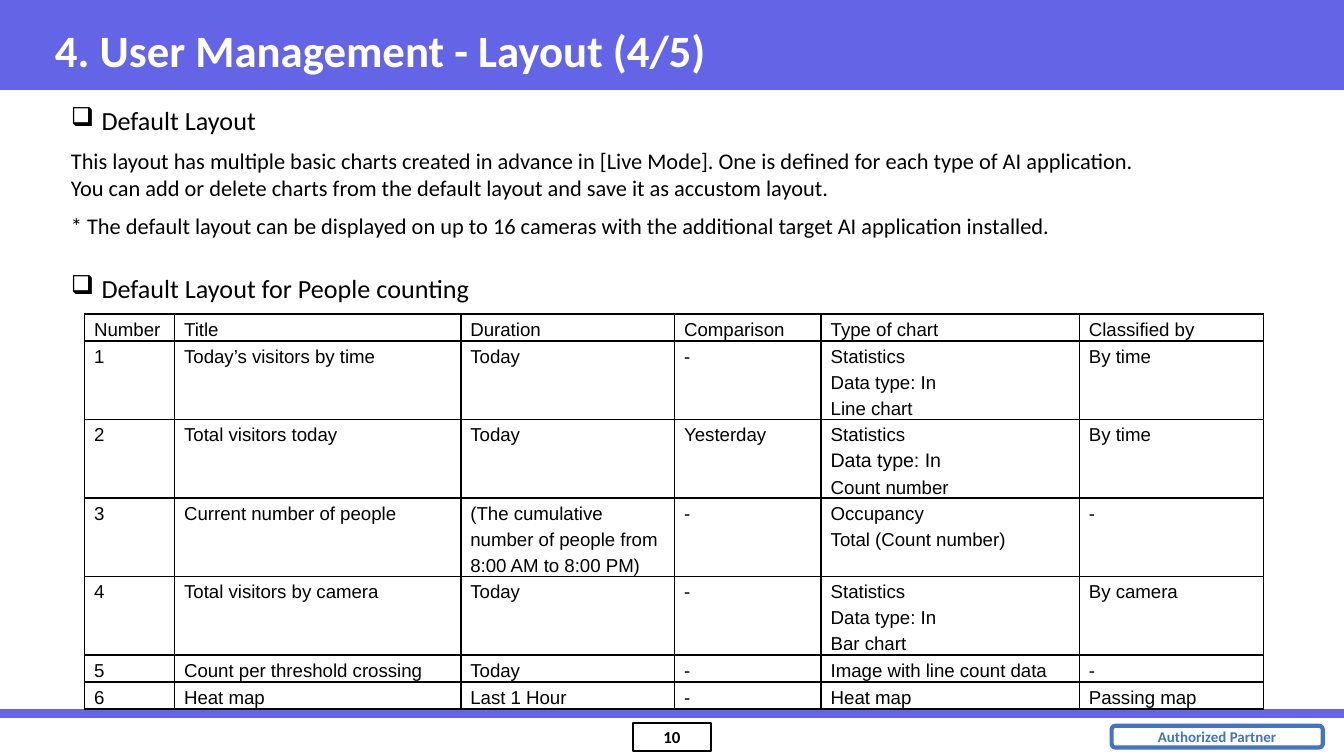
from lxml import etree
from pptx import Presentation
from pptx.dml.color import RGBColor
from pptx.enum.shapes import MSO_CONNECTOR, MSO_SHAPE
from pptx.enum.text import MSO_ANCHOR, PP_ALIGN
from pptx.oxml.ns import qn
from pptx.util import Cm, Pt

RECT, ROUND = MSO_SHAPE.RECTANGLE, MSO_SHAPE.ROUNDED_RECTANGLE
STRAIGHT = MSO_CONNECTOR.STRAIGHT
MIDDLE, TOP = MSO_ANCHOR.MIDDLE, MSO_ANCHOR.TOP
CENTER, LEFT = PP_ALIGN.CENTER, PP_ALIGN.LEFT
COLORS = {"bar": "6464E6", "badge": "4472C4", "ink": "000000", "white": "FFFFFF"}
WIDTH, HEIGHT = 25.4, 14.29

COLS = [1.7, 5.41, 4.04, 2.77, 4.88, 3.48]
LINE, TALL = 0.51, 1.48
HEIGHTS = [LINE] + [TALL] * 4 + [LINE] * 2
ROWS = [
    ["Number", "Title", "Duration", "Comparison", "Type of chart", "Classified by"],
    ["1", "Today’s visitors by time", "Today", "-",
     "Statistics\nData type: In\nLine chart", "By time"],
    ["2", "Total visitors today", "Today", "Yesterday",
     "Statistics\nData type: In\nCount number", "By time"],
    ["3", "Current number of people",
     "(The cumulative number of people from 8:00 AM to 8:00 PM)", "-",
     "Occupancy\nTotal (Count number)", "-"],
    ["4", "Total visitors by camera", "Today", "-",
     "Statistics\nData type: In\nBar chart", "By camera"],
    ["5", "Count per threshold crossing", "Today", "-",
     "Image with line count data", "-"],
    ["6", "Heat map", "Last 1 Hour", "-", "Heat map", "Passing map"],
]
NOTES = [
    ("This layout has multiple basic charts created in advance in [Live Mode]. "
     "One is defined for each type of AI application.", 6),
    ("You can add or delete charts from the default layout "
     "and save it as accustom layout.", 0),
    ("* The default layout can be displayed on up to 16 cameras "
     "with the additional target AI application installed.", 6),
]


def rgb(name):
    return RGBColor.from_string(COLORS[name])


class Page:
    """Holds the text style and the slide being drawn; lengths are in cm."""

    font = "Calibri"
    grid_font = "Arial"

    def __init__(self, slide):
        self.slide = slide
        self.shapes = slide.shapes

    def run(self, para, text, size, color="ink", bold=False, font=None):
        run = para.add_run()
        run.text = text
        style = run.font
        style.name, style.size, style.bold = font or self.font, Pt(size), bold
        style.color.rgb = rgb(color)

    def shape(self, kind, box, fill=None, line=None, width=1):
        item = self.shapes.add_shape(kind, *map(Cm, box))
        item.shadow.inherit = False
        if fill:
            item.fill.solid()
            item.fill.fore_color.rgb = rgb(fill)
        else:
            item.fill.background()
        if line:
            item.line.color.rgb = rgb(line)
            item.line.width = Pt(width)
        else:
            item.line.fill.background()
        return item

    def label(self, item, text, size, color="ink", inset=None, wrap=True):
        frame = item.text_frame
        frame.word_wrap, frame.vertical_anchor = wrap, MIDDLE
        if inset is not None:
            frame.margin_left = frame.margin_right = Cm(inset)
            frame.margin_top = frame.margin_bottom = Cm(inset)
        para = frame.paragraphs[0]
        para.alignment = CENTER
        self.run(para, text, size, color, True)

    def line(self, start, end, color, width):
        item = self.shapes.add_connector(STRAIGHT, *map(Cm, start + end))
        item.line.color.rgb = rgb(color)
        item.line.width = Pt(width)
        etree.SubElement(item._element.spPr, qn("a:effectLst"))

    def text(self, box, anchor=TOP):
        frame = self.shapes.add_textbox(*map(Cm, box)).text_frame
        frame.word_wrap, frame.vertical_anchor = True, anchor
        return frame

    def head(self, frame, text):
        """Put a heading with a box bullet in the first paragraph."""
        para = frame.paragraphs[0]
        props = para._p.get_or_add_pPr()
        props.set("marL", str(Cm(0.58)))
        props.set("indent", str(-Cm(0.58)))
        etree.SubElement(props, qn("a:buChar"), char="❑")
        self.run(para, text, 14)

    def border(self, cell):
        props = cell._tc.get_or_add_tcPr()
        for side in ("lnL", "lnR", "lnT", "lnB"):
            edge = etree.SubElement(props, qn("a:" + side), w=str(Pt(1)))
            fill = etree.SubElement(edge, qn("a:solidFill"))
            etree.SubElement(fill, qn("a:srgbClr"), val=COLORS["ink"])

    def cell(self, cell, text):
        cell.margin_left = cell.margin_right = Cm(0.18)
        cell.margin_top = cell.margin_bottom = 0
        self.border(cell)
        cell.fill.background()
        frame = cell.text_frame
        for i, part in enumerate(text.split("\n")):
            para = frame.add_paragraph() if i else frame.paragraphs[0]
            para.alignment, para.line_spacing = LEFT, Pt(14)
            self.run(para, part, 10, font=self.grid_font)

    def table(self, left, top, cols, heights, rows):
        box = map(Cm, (left, top, sum(cols), sum(heights)))
        grid = self.shapes.add_table(len(rows), len(cols), *box).table
        grid.first_row = grid.horz_banding = False
        for col, width in zip(grid.columns, cols):
            col.width = Cm(width)
        for row, height, texts in zip(grid.rows, heights, rows):
            row.height = Cm(height)
            for cell, text in zip(row.cells, texts):
                self.cell(cell, text)
        return grid


def main():
    deck = Presentation()
    deck.slide_width, deck.slide_height = Cm(WIDTH), Cm(HEIGHT)
    page = Page(deck.slides.add_slide(deck.slide_layouts[6]))

    page.shape(RECT, (0, 0, WIDTH, 1.7), fill="bar")
    number = page.shape(RECT, (11.96, 13.67, 1.48, 0.53), line="ink")
    page.label(number, "10", 9, inset=0.08)
    page.line((0, 13.49), (WIDTH, 13.49), "bar", 4.5)
    badge = page.shape(ROUND, (21.01, 13.72, 3.99, 0.41), line="badge", width=2.25)
    page.label(badge, "Authorized Partner", 8, "badge", wrap=False)

    intro = page.text((1.09, 1.85, 24.03, 2.82))
    page.head(intro, "Default Layout")
    for note, gap in NOTES:
        para = intro.add_paragraph()
        para.space_before = Pt(gap)
        page.run(para, note, 12)

    page.head(page.text((1.09, 5.03, 21.59, 0.86)), "Default Layout for People counting")
    grid = page.table(1.6, 5.94, COLS, HEIGHTS, ROWS)
    grid.cell(2, 4).text_frame.paragraphs[1].runs[0].font.size = Pt(10.5)

    title = page.text((0.79, 0.2, 23.52, 1.47), MIDDLE)
    page.run(title.paragraphs[0], "4. User Management - Layout (4/5)", 24, "white", True)
    deck.save("out.pptx")


if __name__ == "__main__":
    main()
